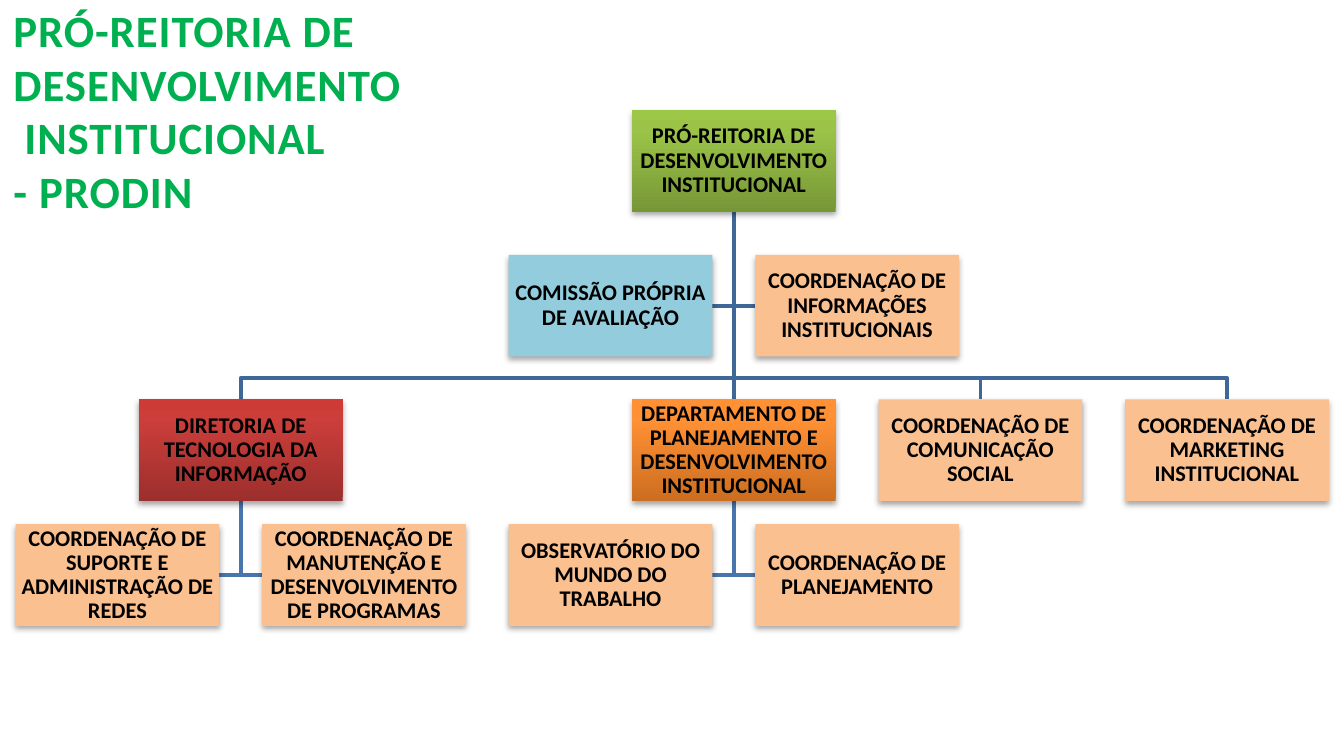
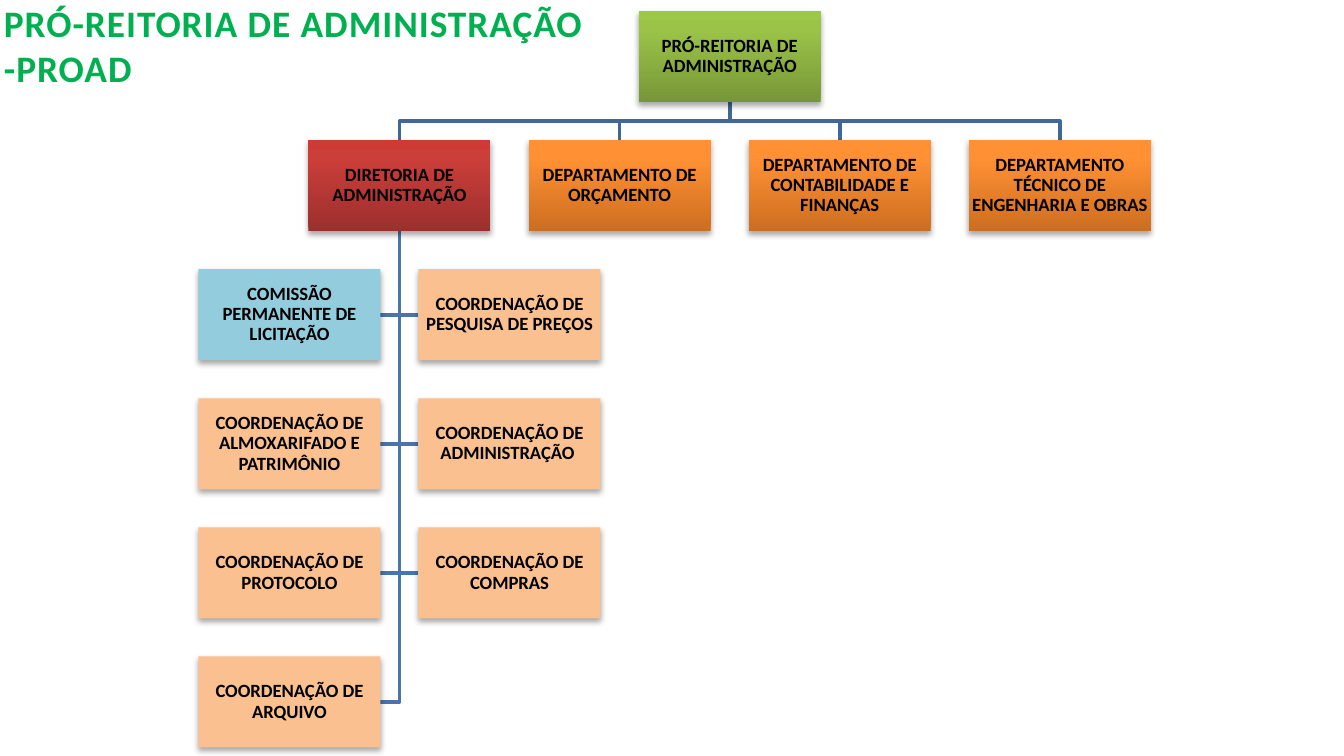
"""Builds two organisation charts, one for each pro-rectorate."""
from copy import deepcopy

from lxml.etree import SubElement
from pptx import Presentation
from pptx.dml.color import RGBColor
from pptx.enum.shapes import MSO_CONNECTOR, MSO_SHAPE
from pptx.enum.text import MSO_ANCHOR, MSO_AUTO_SIZE, PP_ALIGN
from pptx.oxml.ns import qn
from pptx.util import Cm, Pt

FONT = "Calibri"
TITLE_GREEN = RGBColor(0x00, 0xB0, 0x50)
BLACK = RGBColor(0x00, 0x00, 0x00)
LINE_TOP = RGBColor(0x3F, 0x67, 0x97)
LINE_SUB = RGBColor(0x48, 0x75, 0xAC)
PEACH = [RGBColor(0xFA, 0xC0, 0x90)]
BLUE = [RGBColor(0x93, 0xCD, 0xDD)]
GREEN = [RGBColor(0x77, 0x97, 0x37), RGBColor(0x9B, 0xC3, 0x48), RGBColor(0x9D, 0xC7, 0x46)]
RED = [RGBColor(0x9C, 0x2F, 0x2D), RGBColor(0xCB, 0x3E, 0x3A), RGBColor(0xCE, 0x3B, 0x37)]
ORANGE = [RGBColor(0xCC, 0x6E, 0x20), RGBColor(0xFF, 0x90, 0x34), RGBColor(0xFF, 0x91, 0x36)]
STOPS = (0, 0.8, 1)


class OrgChart:
    def __init__(self, prs, center, step, tops, box_size, font_size):
        self.s = prs.slides.add_slide(prs.slide_layouts[5])
        self.center, self.step, self.tops = center, step, tops
        self.w, self.h = box_size
        self.font_size = font_size
        self.gap = step - self.w / 2

    def x(self, col):
        return self.center + col * self.step

    def title(self, lines, left, top, width, height, size):
        sp = self.s.shapes.title
        sp.left, sp.top, sp.width, sp.height = Cm(left), Cm(top), Cm(width), Cm(height)
        tf = sp.text_frame
        tf.text = "\n".join(lines)
        tf.word_wrap = True
        tf.auto_size = MSO_AUTO_SIZE.SHAPE_TO_FIT_TEXT
        tf.vertical_anchor = MSO_ANCHOR.TOP
        for p in tf.paragraphs:
            p.alignment = PP_ALIGN.LEFT
            self.font(p, size, TITLE_GREEN)
            for r in p.runs:
                r.font.bold = True
                r.font._element.set("spc", "50")

    def font(self, p, size, color):
        p.font.name, p.font.size, p.font.bold = FONT, Pt(size), True
        p.font.color.rgb = color

    def box(self, col, row, colors, text):
        sp = self.s.shapes.add_shape(
            MSO_SHAPE.RECTANGLE, Cm(self.x(col) - self.w / 2), Cm(self.tops[row]),
            Cm(self.w), Cm(self.h))
        sp.line.fill.background()
        self.paint(sp, colors)
        self.cast_shadow(sp)
        tf = sp.text_frame
        tf.word_wrap = True
        tf.vertical_anchor = MSO_ANCHOR.MIDDLE
        tf.margin_left = tf.margin_right = tf.margin_top = tf.margin_bottom = Cm(0.03)
        p = tf.paragraphs[0]
        p.text = text
        p.alignment = PP_ALIGN.CENTER
        p.line_spacing = 0.9
        self.font(p, self.font_size, BLACK)

    def paint(self, sp, colors):
        if len(colors) == 1:
            sp.fill.solid()
            sp.fill.fore_color.rgb = colors[0]
            return
        sp.fill.gradient()
        sp.fill.gradient_angle = 90
        stops = sp.element.spPr.find(".//" + qn("a:gsLst"))
        stops.append(deepcopy(stops[-1]))
        for stop, color, position in zip(sp.fill.gradient_stops, colors, STOPS):
            stop.color.rgb = color
            stop.position = position

    def cast_shadow(self, sp):
        sp.shadow.inherit = False
        effects = sp.element.spPr.find(qn("a:effectLst"))
        shadow = SubElement(effects, qn("a:outerShdw"), blurRad="40000", dist="23000",
                            dir="5400000", rotWithShape="0")
        color = SubElement(shadow, qn("a:srgbClr"), val=str(BLACK))
        SubElement(color, qn("a:alpha"), val="35000")

    def line(self, points, color):
        pts = [(Cm(x), Cm(y)) for x, y in points]
        if len(pts) == 2:
            sp = self.s.shapes.add_connector(MSO_CONNECTOR.STRAIGHT, *pts[0], *pts[1])
            SubElement(sp.element.spPr, qn("a:effectLst"))
        else:
            builder = self.s.shapes.build_freeform(*pts[0])
            builder.add_line_segments(pts[1:], close=False)
            sp = builder.convert_to_shape()
            sp.fill.background()
            sp.shadow.inherit = False
        sp.line.color.rgb = color
        sp.line.width = Pt(2)

    def drop(self, parent, cols, row):
        x, y = self.x(parent[0]), self.tops[parent[1]] + self.h
        end = self.tops[row]
        bus = end - self.gap
        for col in cols:
            turn = [(x, bus), (self.x(col), bus)] if col != parent[0] else []
            self.line([(x, y), *turn, (self.x(col), end)], LINE_TOP)

    def sides(self, parent, row, color, signs=(1, -1)):
        x, y = self.x(parent[0]), self.tops[parent[1]] + self.h
        middle = self.tops[row] + self.h / 2
        for sign in signs:
            self.line([(x, y), (x, middle), (x + sign * self.gap, middle)], color)


def prodin(prs):
    c = OrgChart(prs, 13.87, 2.33, (2.08, 4.82, 7.55, 9.91), (3.85, 1.92), 12)
    c.title(["PRÓ-REITORIA DE DESENVOLVIMENTO", " INSTITUCIONAL", "- PRODIN"],
            0, -0.08, 11.5, 4.37, 24)
    c.sides((0, 0), 1, LINE_TOP)
    c.drop((0, 0), (4, 2, 0, -4), 2)
    for col in (0, -4):
        c.sides((col, 2), 3, LINE_SUB)
    for box in (
        (0, 0, GREEN, "PRÓ-REITORIA DE DESENVOLVIMENTO INSTITUCIONAL"),
        (-4, 2, RED, "DIRETORIA DE TECNOLOGIA DA INFORMAÇÃO"),
        (-5, 3, PEACH, "COORDENAÇÃO DE SUPORTE E ADMINISTRAÇÃO DE REDES"),
        (-3, 3, PEACH, "COORDENAÇÃO DE MANUTENÇÃO E DESENVOLVIMENTO DE PROGRAMAS"),
        (0, 2, ORANGE, "DEPARTAMENTO DE PLANEJAMENTO E DESENVOLVIMENTO INSTITUCIONAL"),
        (-1, 3, PEACH, "OBSERVATÓRIO DO MUNDO DO TRABALHO"),
        (1, 3, PEACH, "COORDENAÇÃO DE PLANEJAMENTO"),
        (2, 2, PEACH, "COORDENAÇÃO DE COMUNICAÇÃO SOCIAL"),
        (4, 2, PEACH, "COORDENAÇÃO DE MARKETING INSTITUCIONAL"),
        (-1, 1, BLUE, "COMISSÃO PRÓPRIA DE AVALIAÇÃO"),
        (1, 1, PEACH, "COORDENAÇÃO DE INFORMAÇÕES INSTITUCIONAIS"),
    ):
        c.box(*box)


def proad(prs):
    tops = [0.21 + 2.44 * row for row in range(6)]
    c = OrgChart(prs, 13.79, 2.08, tops, (3.44, 1.72), 10)
    c.title(["PRÓ-REITORIA DE ADMINISTRAÇÃO", "-PROAD"], -0.18, -0.13, 14.88, 1.96, 20)
    c.drop((0, 0), (3, 1, -1, -3), 1)
    c.sides((-3, 1), 5, LINE_SUB, (-1,))
    for row in (4, 3, 2):
        c.sides((-3, 1), row, LINE_SUB)
    for box in (
        (0, 0, GREEN, "PRÓ-REITORIA DE ADMINISTRAÇÃO"),
        (-3, 1, RED, "DIRETORIA DE ADMINISTRAÇÃO"),
        (-4, 2, BLUE, "COMISSÃO PERMANENTE DE LICITAÇÃO"),
        (-2, 2, PEACH, "COORDENAÇÃO DE PESQUISA DE PREÇOS"),
        (-4, 3, PEACH, "COORDENAÇÃO DE ALMOXARIFADO E PATRIMÔNIO"),
        (-2, 3, PEACH, "COORDENAÇÃO DE ADMINISTRAÇÃO "),
        (-4, 4, PEACH, "COORDENAÇÃO DE PROTOCOLO"),
        (-2, 4, PEACH, "COORDENAÇÃO DE COMPRAS"),
        (-4, 5, PEACH, "COORDENAÇÃO DE ARQUIVO"),
        (-1, 1, ORANGE, "DEPARTAMENTO DE ORÇAMENTO"),
        (1, 1, ORANGE, "DEPARTAMENTO DE CONTABILIDADE E FINANÇAS"),
        (3, 1, ORANGE, "DEPARTAMENTO TÉCNICO DE ENGENHARIA E OBRAS"),
    ):
        c.box(*box)


def main():
    prs = Presentation()
    prs.slide_width, prs.slide_height = Cm(25.4), Cm(14.29)
    prodin(prs)
    proad(prs)
    prs.save("out.pptx")


if __name__ == "__main__":
    main()
